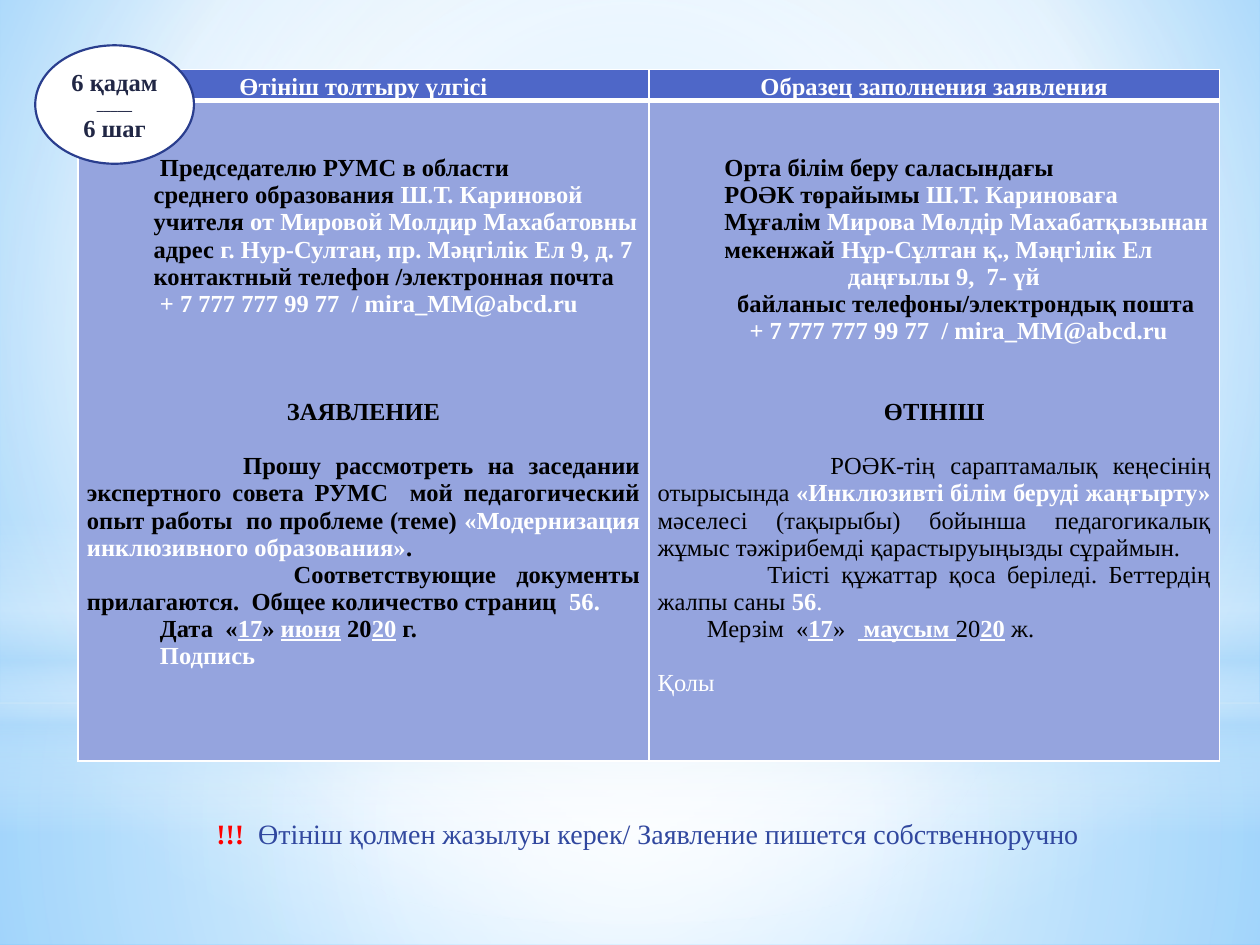
from lxml import etree
from pptx import Presentation
from pptx.dml.color import RGBColor
from pptx.enum.shapes import MSO_SHAPE
from pptx.enum.text import MSO_ANCHOR, PP_ALIGN
from pptx.oxml.ns import qn
from pptx.util import Inches, Pt

RECT, OVAL = MSO_SHAPE.RECTANGLE, MSO_SHAPE.OVAL
LEFT, CENTER, JUSTIFY = PP_ALIGN.LEFT, PP_ALIGN.CENTER, PP_ALIGN.JUSTIFY
MIDDLE = MSO_ANCHOR.MIDDLE
FONT = "Times New Roman"
LINE = 15.5
WHITE, BLACK, NAVY = "FFFFFF", "000000", "31489F"
HEADER, BODY = "4E67C8", "95A4DE"
FILLED = {"color": WHITE, "bold": True}
UNDER = {**FILLED, "underline": True}
PLAIN = {"bold": False}
CENTRE = (50, 50, 50, 50)


def rgb(value):
    """Turn a hex string into a colour."""
    return RGBColor.from_string(value)


def add_run(p, text, size=14, color=BLACK, bold=True, underline=False):
    """Add formatted text to a paragraph."""
    r = p.add_run()
    r.text = text
    f = r.font
    f.name, f.size, f.bold, f.underline = FONT, Pt(size), bold, underline
    f.color.rgb = rgb(color)


def para(*runs, indent=0, before=0, align=LEFT, spacing=None):
    """Describe a paragraph whose gaps are in inches and lines."""
    return {"runs": runs, "indent": indent, "before": before, "align": align, "spacing": spacing}


def write(tf, paras):
    """Fill a text frame with described paragraphs."""
    for i, d in enumerate(paras):
        p = tf.paragraphs[0] if i == 0 else tf.add_paragraph()
        p.alignment = d["align"]
        if d["spacing"]:
            p.line_spacing = d["spacing"]
        if d["before"]:
            p.space_before = Pt(d["before"] * LINE)
        if d["indent"]:
            p._p.get_or_add_pPr().set("indent", str(Inches(d["indent"])))
        for text, style in d["runs"]:
            add_run(p, text, **style)


def set_gradient(fill, owner, stops, focus=None, angle=0):
    """Apply a gradient of (position, colour, opacity) stops."""
    fill.gradient()
    grad = next(owner.iter(qn("a:gradFill")))
    for child in list(grad):
        grad.remove(child)
    gs_lst = etree.SubElement(grad, qn("a:gsLst"))
    for pos, color, opacity in stops:
        gs = etree.SubElement(gs_lst, qn("a:gs"), pos=str(pos * 1000))
        clr = etree.SubElement(gs, qn("a:srgbClr"), val=color)
        if opacity < 100:
            etree.SubElement(clr, qn("a:alpha"), val=str(opacity * 1000))
    if focus:
        route = etree.SubElement(grad, qn("a:path"), {"path": "circle"})
        sides = {k: str(v * 1000) for k, v in zip("ltrb", focus)}
        etree.SubElement(route, qn("a:fillToRect"), sides)
    else:
        etree.SubElement(grad, qn("a:lin"), ang=str(angle * 60000), scaled="0")


class Deck:
    """Hold the style and the current slide."""

    def __init__(self, prs):
        """Start a blank slide."""
        self.s = prs.slides.add_slide(prs.slide_layouts[6])

    def background(self, stops, focus):
        """Paint the slide background."""
        set_gradient(self.s.background.fill, self.s._element, stops, focus)

    def shape(self, kind, box):
        """Add a preset shape without shadow."""
        sp = self.s.shapes.add_shape(kind, *map(Inches, box))
        sp.shadow.inherit = False
        return sp

    def glow(self, kind, box, stops, focus=None, angle=0):
        """Add a borderless gradient shape."""
        sp = self.shape(kind, box)
        set_gradient(sp.fill, sp._element.spPr, stops, focus, angle)
        sp.line.fill.background()

    def badge(self, box, paras):
        """Add the white outlined oval with its text."""
        sp = self.shape(OVAL, box)
        sp.fill.solid()
        sp.fill.fore_color.rgb = rgb(WHITE)
        sp.line.color.rgb = rgb("2A3E8E")
        sp.line.width = Pt(1.25)
        sp.text_frame.vertical_anchor = MIDDLE
        write(sp.text_frame, paras)

    def text(self, box, paras):
        """Add a wrapped text box."""
        tf = self.s.shapes.add_textbox(*map(Inches, box)).text_frame
        tf.word_wrap = True
        write(tf, paras)

    def cell(self, cell, paras, fill, top, widths):
        """Fill and border one table cell."""
        cell.margin_left = cell.margin_right = Inches(0.07)
        cell.margin_top, cell.margin_bottom = Inches(top), 0
        cell.fill.solid()
        cell.fill.fore_color.rgb = rgb(fill)
        tc_pr = cell._tc.get_or_add_tcPr()
        for i, (side, width) in enumerate(zip("LRTB", widths)):
            ln = etree.Element(qn("a:ln" + side), w=str(Pt(width)))
            solid = etree.SubElement(ln, qn("a:solidFill"))
            etree.SubElement(solid, qn("a:srgbClr"), val=WHITE)
            tc_pr.insert(i, ln)
        write(cell.text_frame, paras)

    def table(self, box, heights, heads, bodies):
        """Add the two-row table of sample forms."""
        table = self.s.shapes.add_table(2, len(heads), *map(Inches, box)).table
        table.horz_banding = False
        for row, height in zip(table.rows, heights):
            row.height = Inches(height)
        for col, (head, body) in enumerate(zip(heads, bodies)):
            title = para((head, {"color": WHITE}), align=CENTER, spacing=1.15)
            self.cell(table.cell(0, col), [title], HEADER, 0, (1, 1, 1, 3))
            self.cell(table.cell(1, col), body, BODY, 0.43, (1, 1, 3, 1))


RUSSIAN = [
    para(("Председателю РУМС в области", {}), indent=0.58),
    para(("среднего образования ", {}), ("Ш.Т. Кариновой", FILLED), indent=0.53),
    para(("учителя ", {}), ("от Мировой Молдир Махабатовны", FILLED), indent=0.53),
    para(("адрес ", {}), ("г. Нур-Султан, пр. Мәңгілік Ел 9, д. 7", FILLED), indent=0.53),
    para(("контактный телефон /электронная почта", {}), indent=0.53),
    para(("+ 7 777 777 99 77  / mira_MM@abcd.ru", FILLED), indent=0.58),
    para(("ЗАЯВЛЕНИЕ", {}), before=3, align=CENTER),
    para(("Прошу рассмотреть на заседании экспертного совета РУМС  мой педагогический "
          "опыт работы  по проблеме (теме) ", {}),
         ("«Модернизация инклюзивного образования»", FILLED), (".", {}),
         indent=1.24, before=1, align=JUSTIFY),
    para(("Соответствующие документы прилагаются.  Общее количество страниц  ", {}),
         ("56.", FILLED), indent=1.64, align=JUSTIFY),
    para(("Дата  «", {}), ("17", UNDER), ("» ", {}), ("июня", UNDER), (" 20", {}),
         ("20", UNDER), (" г.", {}), indent=0.58),
    para(("Подпись", FILLED), indent=0.58),
]
KAZAKH = [
    para(("Орта білім беру саласындағы", {}), indent=0.53),
    para(("РОӘК төрайымы ", {}), ("Ш.Т. Кариноваға", FILLED), indent=0.53),
    para(("Мұғалім ", {}), ("Мирова Мөлдір Махабатқызынан", FILLED), indent=0.53),
    para(("мекенжай ", {}), ("Нұр-Сұлтан қ., Мәңгілік Ел", FILLED), indent=0.53),
    para(("даңғылы 9,  7- үй", FILLED), indent=1.51),
    para(("байланыс телефоны/электрондық пошта", {}), indent=0.63),
    para(("+ 7 777 777 99 77  / mira_MM@abcd.ru", FILLED), indent=0.73),
    para(("ӨТІНІШ", {}), before=2, align=CENTER),
    para(("РОӘК-тің сараптамалық кеңесінің отырысында ", PLAIN),
         ("«Инклюзивті білім беруді жаңғырту» ", FILLED),
         ("мәселесі (тақырыбы) бойынша педагогикалық жұмыс тәжірибемді "
          "қарастыруыңызды сұраймын.", PLAIN),
         indent=1.37, before=1, align=JUSTIFY),
    para(("Тиісті құжаттар қоса беріледі. Беттердің жалпы саны ", PLAIN), ("56", FILLED),
         (".", {"color": WHITE, "bold": False}), indent=0.87, align=JUSTIFY),
    para(("Мерзім  «", PLAIN), ("17", UNDER), ("»  ", PLAIN), (" маусым ", UNDER),
         ("20", PLAIN), ("20", UNDER), (" ж.", PLAIN), indent=0.39),
    para(("Қолы", {"color": WHITE, "bold": False}), before=1),
]


def main():
    """Build and save the slide."""
    prs = Presentation()
    prs.slide_width, prs.slide_height = Inches(10), Inches(7.5)
    deck = Deck(prs)
    deck.background([(0, "9ED5FF", 100), (60, WHITE, 100), (100, "5BB9FF", 100)], (20, 10, 20, 60))
    sky = "B4DCFA"
    deck.glow(RECT, (0, 5.58, 10, 1.92), [(0, WHITE, 91), (37, WHITE, 76), (100, sky, 79)], CENTRE)
    deck.glow(RECT, (0, 0, 10, 5.58), [(0, WHITE, 89), (48, WHITE, 62), (100, sky, 79)], CENTRE)
    deck.glow(RECT, (0, 4.12, 10, 2.5),
              [(0, WHITE, 0), (29, WHITE, 30), (45, sky, 40), (55, WHITE, 26),
               (65, sky, 60), (100, WHITE, 0)], angle=90)
    deck.glow(OVAL, (0, 1.75, 10, 5.58), [(0, WHITE, 100), (56, WHITE, 0)], CENTRE)
    deck.table((0.62, 0.55, 9.06, 5.49), (0.25, 5.24),
               ("Өтініш толтыру үлгісі", "Образец заполнения заявления"), (RUSSIAN, KAZAKH))
    note = "  Өтініш қолмен жазылуы керек/ Заявление пишется собственноручно"
    deck.text((0.63, 6.43, 9.02, 0.37),
              [para(("!!!", {"size": 16, "color": "FF0000"}),
                    (note, {"size": 16, "color": NAVY, "bold": False}), align=CENTER)])
    step = (("6 қадам", 14), ("_____", 8), ("6 шаг", 14))
    deck.badge((0.28, 0.36, 1.26, 0.94),
               [para((text, {"size": size, "color": "212745"}), align=CENTER)
                for text, size in step])
    prs.save("out.pptx")


if __name__ == "__main__":
    main()
